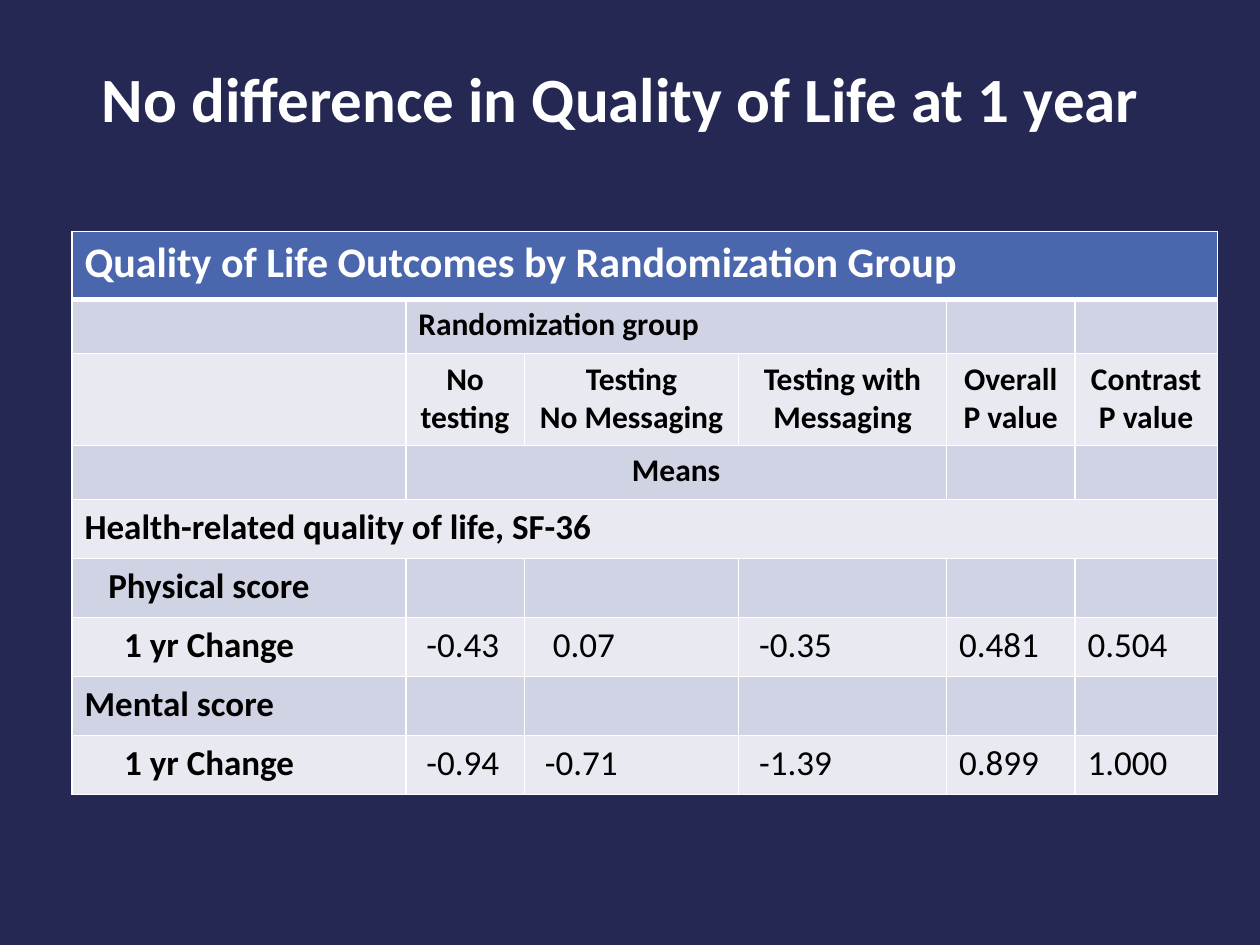
from dataclasses import dataclass

from lxml import etree
from pptx import Presentation
from pptx import util as u
from pptx.dml import color
from pptx.enum import text
from pptx.oxml import ns


@dataclass(frozen=True)
class Theme:
    font: str = "Calibri"
    background: str = "242852"
    banner: str = "4A66AC"
    bands: tuple = ("D0D3E3", "E9EAF1")
    light: str = "FFFFFF"
    dark: str = "000000"
    title_size: int = 36
    banner_size: int = 24
    heading_size: int = 18
    body_size: int = 20
    rule: float = 1
    heavy_rule: float = 3


THEME = Theme()
INDENT_STEP = 0.16  # cm

COLUMN_WIDTHS = [6.73, 2.39, 4.32, 4.19, 2.59, 2.87]
ROW_HEIGHTS = [1.37, 1.09, 1.85, 1.09] + [1.19] * 5
HEADING_ROWS = range(1, 4)
SPANS = [(0, 0, 5), (1, 1, 3), (3, 1, 3), (4, 0, 5)]  # row, first, last column

ROWS = [
    ["Quality of Life Outcomes by Randomization Group"],
    ["", "Randomization group"],
    ["", "No testing", "Testing\nNo Messaging", "Testing with Messaging",
     "Overall P value", "Contrast P value"],
    ["", "Means"],
    ["Health-related quality of life, SF-36"],
    ["Physical score"],
    ["1 yr Change", "-0.43", "0.07", "-0.35", "0.481", "0.504"],
    ["Mental score"],
    ["1 yr Change", "-0.94", "-0.71", "-1.39", "0.899", "1.000"],
]
# Indent steps of the cells that stand in from the left edge
INDENTS = {(5, 0): 3, (6, 0): 5, (8, 0): 5,
           (6, 1): 1, (6, 2): 2, (6, 3): 1,
           (8, 1): 1, (8, 2): 1, (8, 3): 1}


def rgb(value):
    return color.RGBColor.from_string(value)


def add_text(paragraph, wording, size, ink, bold):
    run = paragraph.add_run()
    run.text = wording
    run.font.name = THEME.font
    run.font.size = u.Pt(size)
    run.font.bold = bold
    run.font.color.rgb = rgb(ink)


def rule_cell(cell, row):
    """Draw white rules on all sides, heavier beneath the banner."""
    properties = cell._tc.get_or_add_tcPr()
    heavy_side = {0: "lnB", 1: "lnT"}.get(row)
    for side in ("lnL", "lnR", "lnT", "lnB"):
        width = THEME.heavy_rule if side == heavy_side else THEME.rule
        line = etree.SubElement(properties, ns.qn(f"a:{side}"), w=str(u.Pt(width)))
        fill = etree.SubElement(line, ns.qn("a:solidFill"))
        etree.SubElement(fill, ns.qn("a:srgbClr"), val=THEME.light)


def write_cell(cell, row, column, wording):
    if row == 0:
        size, ink = THEME.banner_size, THEME.light
    else:
        size = THEME.heading_size if row in HEADING_ROWS else THEME.body_size
        ink = THEME.dark
    bold = row < 6 or column == 0
    for index, line in enumerate(wording.split("\n")):
        frame = cell.text_frame
        paragraph = frame.add_paragraph() if index else frame.paragraphs[0]
        if row in (2, 3):
            paragraph.alignment = text.PP_ALIGN.CENTER
        steps = INDENTS.get((row, column), 0)
        if steps:
            properties = paragraph._p.get_or_add_pPr()
            properties.set("marL", str(u.Cm(steps * INDENT_STEP)))
            properties.set("indent", "0")
        add_text(paragraph, line, size, ink, bold)


def place_title(slide, left, top, width, height):
    title = slide.shapes.title
    title.left, title.top = u.Cm(left), u.Cm(top)
    title.width, title.height = u.Cm(width), u.Cm(height)
    title.text_frame.vertical_anchor = text.MSO_ANCHOR.MIDDLE
    heading = title.text_frame.paragraphs[0]
    heading.alignment = text.PP_ALIGN.LEFT
    heading.line_spacing = 0.9
    add_text(heading, "No difference in Quality of Life at 1 year",
             THEME.title_size, THEME.light, True)


def place_outcomes(slide, left, top):
    outcomes = slide.shapes.add_table(
        len(ROW_HEIGHTS), len(COLUMN_WIDTHS), u.Cm(left), u.Cm(top),
        u.Cm(sum(COLUMN_WIDTHS)), u.Cm(sum(ROW_HEIGHTS))).table
    for column, width in zip(outcomes.columns, COLUMN_WIDTHS):
        column.width = u.Cm(width)
    for row, height in zip(outcomes.rows, ROW_HEIGHTS):
        row.height = u.Cm(height)

    # Rules, banded fills and wording
    for row, wordings in enumerate(ROWS):
        for column in range(len(COLUMN_WIDTHS)):
            cell = outcomes.cell(row, column)
            rule_cell(cell, row)
            cell.fill.solid()
            cell.fill.fore_color.rgb = rgb(
                THEME.bands[(row - 1) % 2] if row else THEME.banner)
            if column < len(wordings) and wordings[column]:
                write_cell(cell, row, column, wordings[column])

    for row, first, last in SPANS:
        outcomes.cell(row, first).merge(outcomes.cell(row, last))


def main():
    deck = Presentation()
    deck.slide_width, deck.slide_height = u.Cm(25.4), u.Cm(19.05)
    slide = deck.slides.add_slide(deck.slide_layouts.get_by_name("Title Only"))
    slide.background.fill.solid()
    slide.background.fill.fore_color.rgb = rgb(THEME.background)
    place_title(slide, 1.8, 0.69, 21.89, 2.74)
    place_outcomes(slide, 1.45, 4.67)
    deck.save("out.pptx")


if __name__ == "__main__":
    main()
